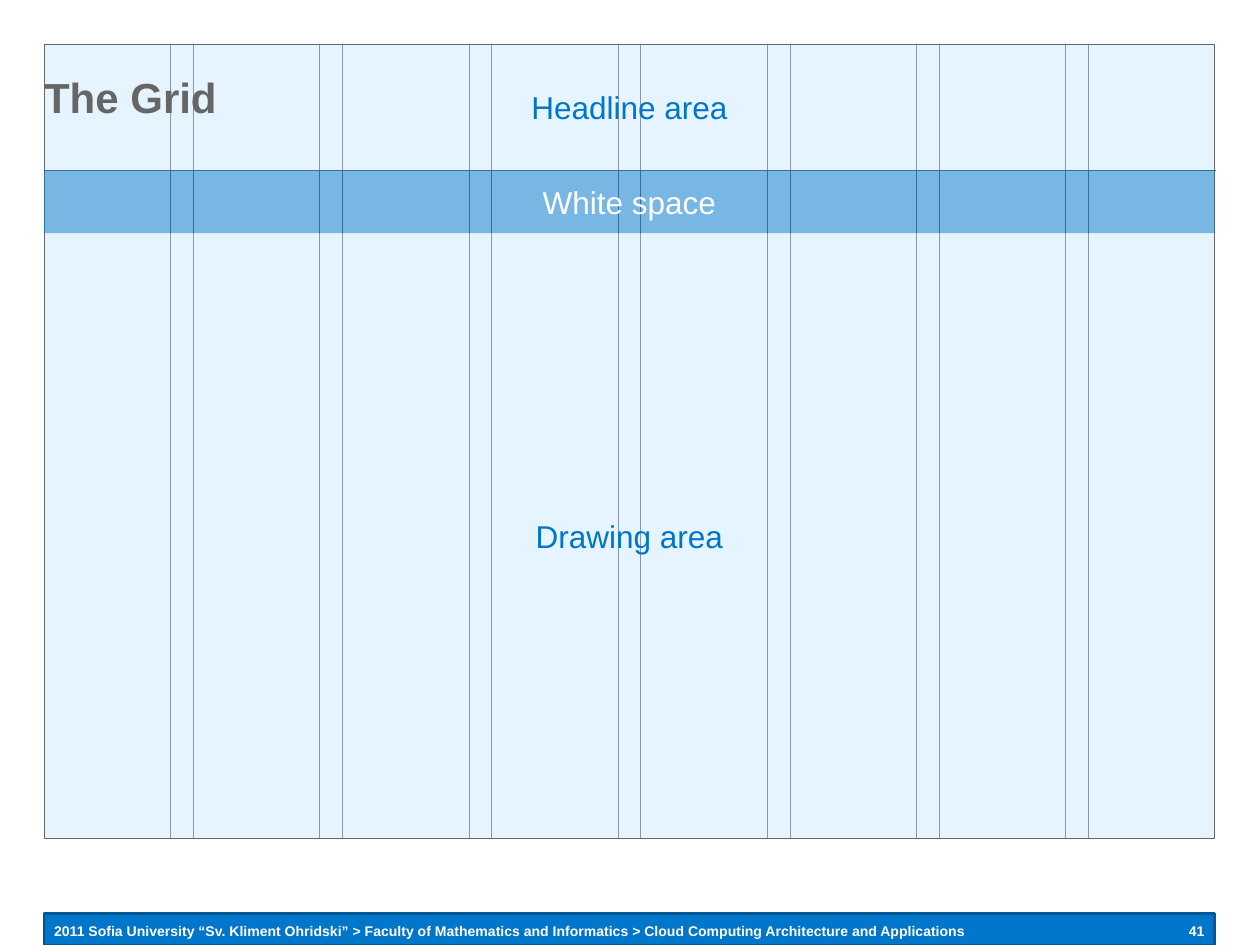
from lxml.etree import SubElement
from pptx import Presentation
from pptx.dml.color import RGBColor
from pptx.enum.shapes import MSO_CONNECTOR, MSO_SHAPE
from pptx.enum.text import MSO_ANCHOR, PP_ALIGN
from pptx.oxml.ns import qn
from pptx.util import Inches, Pt

BLUE, PALE, GREY, WHITE = "0076CB", "C2E5FF", "666666", "FFFFFF"


def color(code):
    return RGBColor.from_string(code)


def write(shape, text, size, ink, bold=False, align=PP_ALIGN.LEFT,
          anchor=MSO_ANCHOR.MIDDLE, pads=(0, 0, 0, 0), wrap=True):
    frame = shape.text_frame
    frame.word_wrap = wrap
    frame.vertical_anchor = anchor
    (frame.margin_left, frame.margin_top,
     frame.margin_right, frame.margin_bottom) = map(Inches, pads)
    para = frame.paragraphs[0]
    para.alignment = align
    run = para.add_run()
    run.text = text
    font = run.font
    font.name, font.size, font.bold = "Arial", Pt(size), bold
    font.color.rgb = color(ink)


def label(slide, box, *args, **style):
    shape = slide.shapes.add_textbox(*map(Inches, box))
    write(shape, *args, **style)


def rule(slide, start, end, width):
    line = slide.shapes.add_connector(
        MSO_CONNECTOR.STRAIGHT, *map(Inches, start + end))
    line.line.color.rgb = color(GREY)
    line.line.width = Pt(width)
    SubElement(line._element.spPr, qn("a:effectLst"))


def panel(slide, box, fill=None, alpha=100, edge=None, width=0):
    shape = slide.shapes.add_shape(MSO_SHAPE.RECTANGLE, *map(Inches, box))
    shape.shadow.inherit = False
    if fill:
        shape.fill.solid()
        shape.fill.fore_color.rgb = color(fill)
        if alpha < 100:
            tint = shape.fill._xPr.find(".//" + qn("a:srgbClr"))
            SubElement(tint, qn("a:alpha"), val=str(alpha * 1000))
    else:
        shape.fill.background()
    if edge:
        shape.line.color.rgb = color(edge)
        shape.line.width = Pt(width)
    else:
        shape.line.fill.background()
    return shape


def area(slide, box, text, fill, alpha, ink):
    shape = panel(slide, box, fill, alpha)
    write(shape, text, 18, ink, align=PP_ALIGN.CENTER,
          pads=(0.1, 0.08, 0.1, 0.08))


def footer(slide, box):
    left, top, width, height = box
    panel(slide, box, BLUE, edge="005796", width=1.5)
    style = dict(bold=True, anchor=MSO_ANCHOR.TOP, wrap=False)
    label(slide, (left, top + 0.07, 7.4, 0.13),
          "2011 Sofia University “Sv. Kliment Ohridski” > Faculty of "
          "Mathematics and Informatics > Cloud Computing Architecture "
          "and Applications", 8, WHITE, pads=(0.08, 0, 0, 0), **style)
    label(slide, (left + width - 0.22, top + 0.07, 0.22, 0.13),
          "41", 8, WHITE, align=PP_ALIGN.RIGHT,
          pads=(0, 0, 0.08, 0), **style)


def columns(slide, box, count, gap):
    left, top, width, height = box
    pitch = (width + gap) / count
    for index in range(1, count):
        edge = left + index * pitch
        for x in (edge - gap, edge):
            rule(slide, (x, top), (x, top + height), 0.25)


def grid(slide, box):
    left, top, width, height = box
    head, space = 1, 0.5
    body = head + space
    columns(slide, box, 8, 0.18)
    area(slide, (left, top, width, head), "Headline area", PALE, 40, BLUE)
    area(slide, (left, top + body, width, height - body),
         "Drawing area", PALE, 40, BLUE)
    panel(slide, box, edge=GREY, width=0.25)
    area(slide, (left, top + head, width, space),
         "White space", BLUE, 53, WHITE)


def main():
    deck = Presentation()
    deck.slide_width, deck.slide_height = Inches(10), Inches(7.5)
    slide = deck.slides.add_slide(deck.slide_layouts[6])
    left, top, width = 0.35, 0.35, 9.29
    rule(slide, (left, 1.35), (9.65, 1.35), 0.5)
    footer(slide, (left, 7.25, width, 0.25))
    grid(slide, (left, top, width, 6.3))
    label(slide, (left, top, width, 0.83), "The Grid", 24, GREY, bold=True)
    deck.save("out.pptx")


if __name__ == "__main__":
    main()
